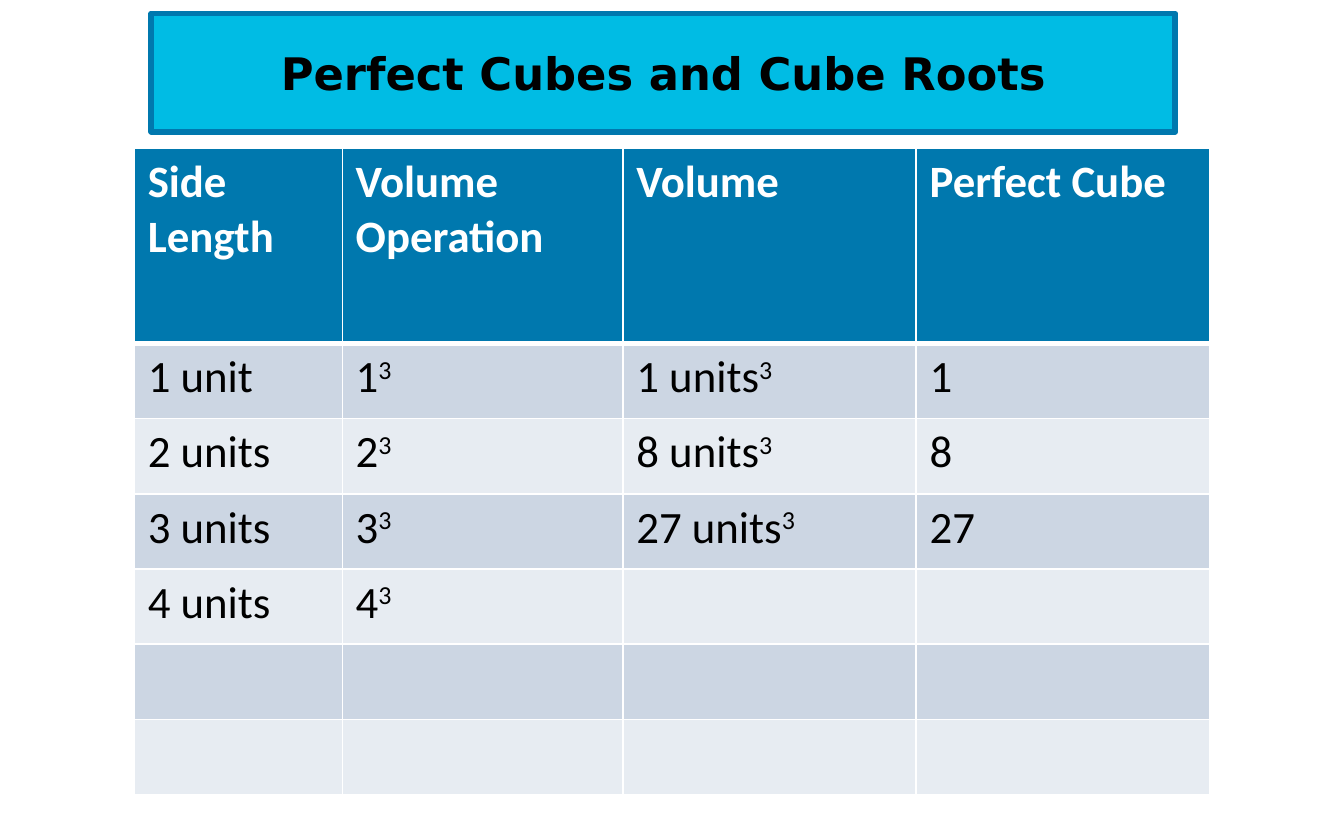
from lxml import etree
from pptx import Presentation
from pptx.dml.color import RGBColor
from pptx.enum import text
from pptx.oxml import ns
from pptx.util import Pt

hues = {"cyan": "00BCE4", "blue": "0078AE", "dark": "CCD6E3",
        "light": "E7ECF2", "white": "FFFFFF", "black": "000000"}


def write(frame, words, font="Calibri", size=24, hue="black", bold=False, align=None):
    """Fill the frame; what follows a ^ is set as a superscript."""
    para = frame.paragraphs[0]
    para.alignment = align
    for i, part in enumerate(words.split("^")):
        run = para.add_run()
        run.text = part
        run.font.name = font
        run.font.size = Pt(size)
        run.font.bold = bold
        run.font.color.rgb = RGBColor.from_string(hues[hue])
        if i:
            run.font._element.set("baseline", "30000")


def edge(cell, sides):
    """Draw white borders; sides maps L, R, T, B to widths in points."""
    props = cell._tc.get_or_add_tcPr()
    for i, side in enumerate("LRTB"):
        line = etree.Element(ns.qn(f"a:ln{side}"), w=str(Pt(sides[side])))
        fill = etree.SubElement(line, ns.qn("a:solidFill"))
        etree.SubElement(fill, ns.qn("a:srgbClr"), val=hues["white"])
        props.insert(i, line)


deck = Presentation()
deck.slide_width, deck.slide_height = Pt(720), Pt(450)
slide = deck.slides.add_slide(deck.slide_layouts[5])

# Title banner
title = slide.shapes.title
title.left, title.top, title.width, title.height = Pt(81), Pt(7.2), Pt(548.6), Pt(63.4)
title.fill.solid()
title.fill.fore_color.rgb = RGBColor.from_string(hues["cyan"])
title.line.color.rgb = RGBColor.from_string(hues["blue"])
title.line.width = Pt(3)
etree.SubElement(title.line._ln, ns.qn("a:round"))
title.text_frame.vertical_anchor = text.MSO_ANCHOR.MIDDLE
write(title.text_frame, "Perfect Cubes and Cube Roots", font="DejaVu Sans",
      bold=True, align=text.PP_ALIGN.CENTER)

# Table of cubes
rows = [
    ["Side Length", "Volume Operation", "Volume", "Perfect Cube"],
    ["1 unit", "1^3", "1 units^3", "1"],
    ["2 units", "2^3", "8 units^3", "8"],
    ["3 units", "3^3", "27 units^3", "27"],
    ["4 units", "4^3", "", ""],
    [""] * 4,
    [""] * 4,
]
wide = [111.4, 150.4, 157.1, 157.1]
high = [104.4] + [40.3] * 6
grid = slide.shapes.add_table(len(rows), len(wide), Pt(72), Pt(79.6),
                              Pt(sum(wide)), Pt(sum(high))).table
for col, width in zip(grid.columns, wide):
    col.width = Pt(width)

for r, row in enumerate(rows):
    grid.rows[r].height = Pt(high[r])
    head = r == 0
    shade = "blue" if head else "dark" if r % 2 else "light"
    for c, words in enumerate(row):
        cell = grid.cell(r, c)
        cell.fill.solid()
        cell.fill.fore_color.rgb = RGBColor.from_string(hues[shade])
        edge(cell, {"L": 1, "R": 1, "T": 3 if r == 1 else 1, "B": 3 if head else 1})
        if words:
            write(cell.text_frame, words, hue="white" if head else "black", bold=head)

deck.save("out.pptx")
